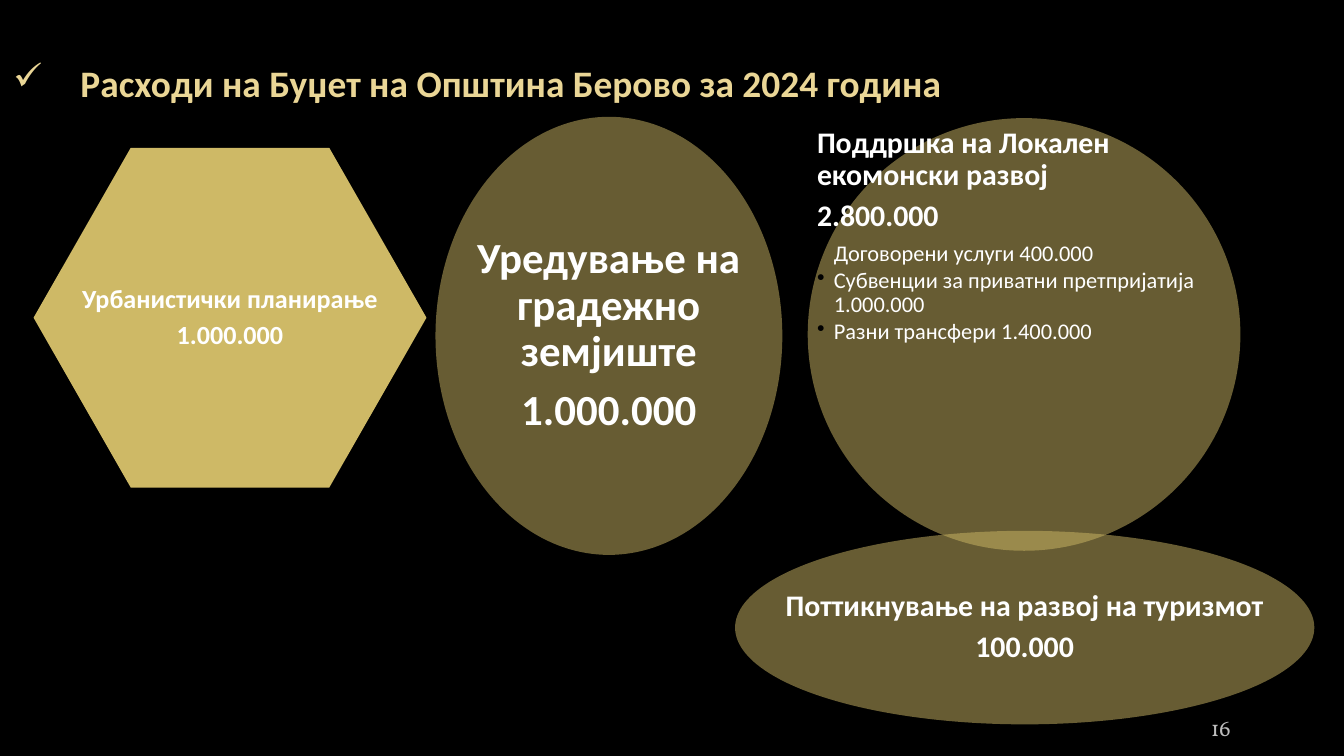
from lxml import etree
from pptx import Presentation
from pptx.dml.color import RGBColor
from pptx.enum.shapes import MSO_SHAPE
from pptx.enum.text import MSO_ANCHOR, PP_ALIGN
from pptx.oxml.ns import qn
from pptx.util import Pt

HEXAGON, OVAL = MSO_SHAPE.HEXAGON, MSO_SHAPE.OVAL
TOP, MIDDLE, BOTTOM = MSO_ANCHOR.TOP, MSO_ANCHOR.MIDDLE, MSO_ANCHOR.BOTTOM
LEFT, CENTER = PP_ALIGN.LEFT, PP_ALIGN.CENTER

BLACK = RGBColor(0x00, 0x00, 0x00)
WHITE = RGBColor(0xFF, 0xFF, 0xFF)
GOLD = RGBColor(0xCE, 0xB9, 0x66)
PALE_GOLD = RGBColor(0xEA, 0xD6, 0x96)
GREY = RGBColor(0xBD, 0xBD, 0xBD)


def add_text(box, inset, anchor, align, lines, color, name="Calibri", spacing=0.9):
    """Add a text box; each line is (text, size, bold, space after)."""
    tf = s.shapes.add_textbox(*map(Pt, box)).text_frame
    tf.word_wrap = True
    tf.vertical_anchor = anchor
    tf.margin_left = tf.margin_right = tf.margin_top = tf.margin_bottom = Pt(inset)
    for i, (text, size, bold, after) in enumerate(lines):
        p = tf.add_paragraph() if i else tf.paragraphs[0]
        p.add_run().text = text
        p.alignment = align
        p.line_spacing = spacing
        p.space_after = Pt(after)
        p.font.name, p.font.size, p.font.bold = name, Pt(size), bold
        p.font.color.rgb = color
    return tf.paragraphs


def add_bullet(p, char, indent, color):
    pPr = p._p.get_or_add_pPr()
    pPr.set("marL", str(Pt(indent)))
    pPr.set("indent", str(Pt(-indent)))
    clr = etree.Element(qn("a:buClr"))
    etree.SubElement(clr, qn("a:srgbClr"), val=str(color))
    mark = etree.Element(qn("a:buChar"), char=char)
    for element in (clr, mark):
        pPr.find(qn("a:defRPr")).addprevious(element)


prs = Presentation()
prs.slide_width, prs.slide_height = Pt(720), Pt(405)
s = prs.slides.add_slide(prs.slide_layouts[6])
s.background.fill.solid()
s.background.fill.fore_color.rgb = BLACK

add_text((624, 379, 60, 21.5), 7.2, MIDDLE, CENTER, [("16", 12, False, 0)],
         GREY, "Vollkorn", 1)
title = add_text((0, 22.5, 660, 41), 7.2, BOTTOM, LEFT,
                 [("Расходи на Буџет на Општина Берово за 2024 година", 20, True, 0)],
                 PALE_GOLD, spacing=1)
add_bullet(title[0], "✓", 36, PALE_GOLD)

# kind, box, opacity in percent, inset, anchor, alignment, text size, heading, amount, items
BUDGET_ITEMS = [
    (HEXAGON, (18, 79.2, 210.5, 182), 100, 1.5, MIDDLE, CENTER, 14,
     "Урбанистички планирање", "1.000.000", []),
    (OVAL, (432.7, 63.3, 231.8, 231.8), 50, 5, TOP, LEFT, 16,
     "Поддршка на Локален екомонски развој", "2.800.000",
     ["Договорени услуги 400.000",
      "Субвенции за приватни претпријатија 1.000.000",
      "Разни трансфери 1.400.000"]),
    (OVAL, (233.3, 62.6, 185.8, 234.7), 50, 7.2, MIDDLE, CENTER, 23,
     "Уредување на градежно земјиште", "1.000.000", []),
    (OVAL, (393.8, 284.4, 310.3, 103.7), 50, 5, MIDDLE, CENTER, 16,
     "Поттикнување на развој на туризмот", "100.000", []),
]
for kind, box, opacity, inset, anchor, align, size, heading, amount, items in BUDGET_ITEMS:
    sp = s.shapes.add_shape(kind, *map(Pt, box))
    sp.shadow.inherit = False
    sp.line.fill.background()
    sp.fill.solid()
    sp.fill.fore_color.rgb = GOLD
    if kind == HEXAGON:
        sp.adjustments[0] = 0.286
    if opacity < 100:
        color = sp._element.spPr.find(qn("a:solidFill"))[0]
        etree.SubElement(color, qn("a:alpha"), val=str(opacity * 1000))

    lines = [(text, size, True, 0.3 * size) for text in (heading, amount)]
    lines += [(text, 12, False, 1.5) for text in items]
    paragraphs = add_text(box, inset, anchor, align, lines, WHITE)
    for p in paragraphs[2:]:
        add_bullet(p, "•", 9, BLACK)

prs.save("out.pptx")
